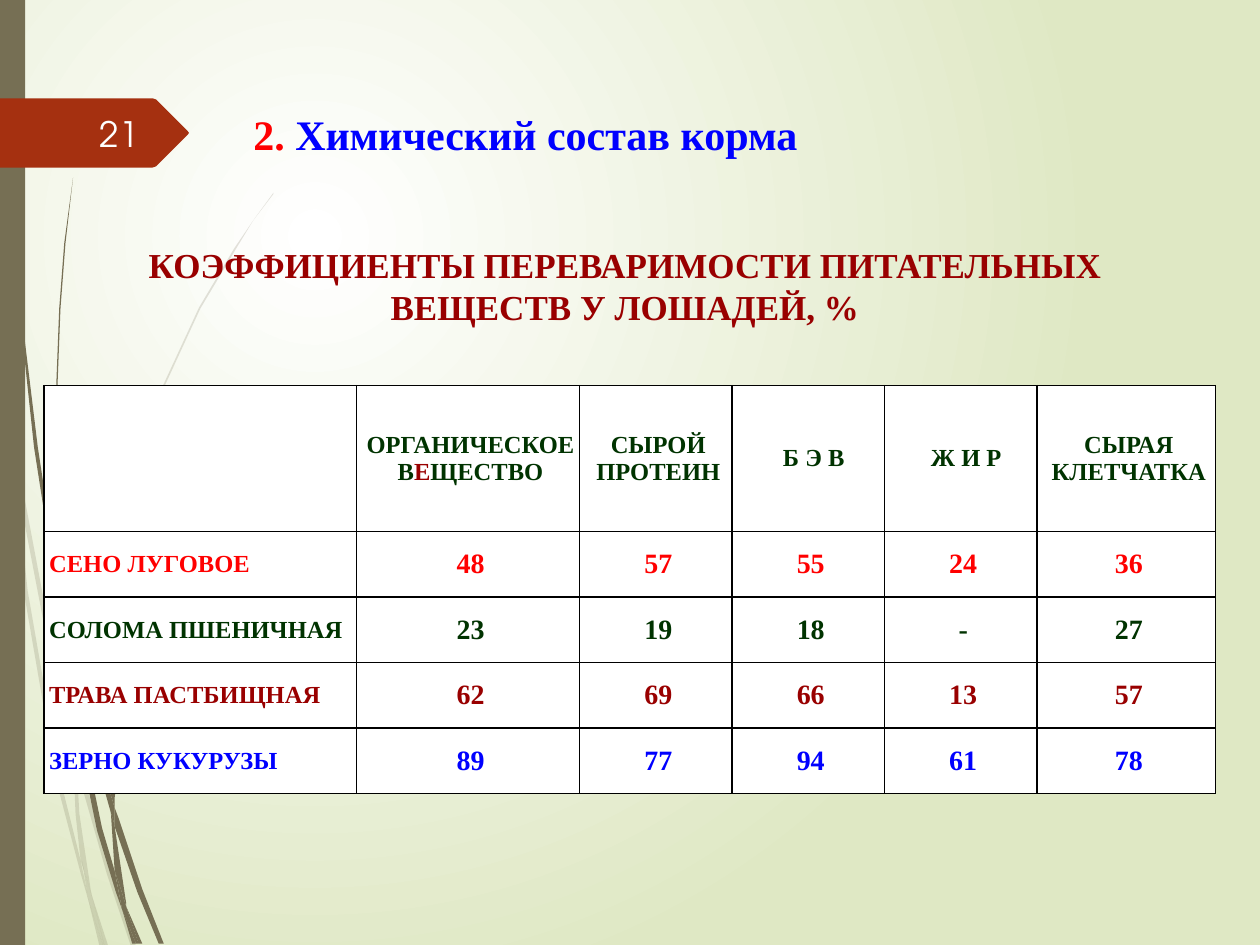
import pptx
import pptx.util
import pptx.dml.color
import pptx.enum.text
import pptx.oxml
import pptx.oxml.ns
from lxml import etree

Inches = pptx.util.Inches
ALIGN = pptx.enum.text.PP_ALIGN
MIDDLE = pptx.enum.text.MSO_ANCHOR.MIDDLE
qn = pptx.oxml.ns.qn


class Theme:
    serif, sans = "Times New Roman", "TeX Gyre Adventor"
    white, mist, olive, rust = "FFFFFF", "DFE8C4", "766F54", "A53010"
    red, blue, maroon, green = "FF0000", "0000FF", "990000", "003300"
    black, number = "000000", "FEFFFF"
    title, subtitle, label, value = 24, 20, 14, 16


# Grass outlines: x, y pairs in hundredths of an inch
PALE_GRASS = [
    [(8, 350), (6, 322), (0, 282), (0, 299), (7, 344)],
    [(40, 522), (59, 599), (59, 586), (43, 520), (10, 345), (12, 376)],
    [(64, 607), (61, 596), (61, 610), (85, 694), (104, 751), (108, 751), (88, 692)],
    [(83, 751), (86, 751), (73, 711)],
    [(64, 683), (48, 619), (22, 469), (12, 376), (8, 350), (19, 470), (45, 621),
     (64, 693), (70, 714), (69, 707)],
    [(58, 599), (60, 646), (64, 683), (67, 692), (73, 711), (72, 706), (63, 646),
     (61, 610), (61, 608)],
    [(61, 584), (76, 462), (111, 349), (159, 245), (187, 198), (201, 175), (217, 154),
     (217, 153), (201, 175), (186, 197), (158, 244), (110, 348), (75, 461), (59, 584),
     (59, 586), (61, 596)],
    [(70, 714), (79, 751), (82, 751)],
    [(61, 608), (61, 610), (61, 596), (59, 586), (58, 599)],
    [(67, 692), (65, 683), (69, 707), (70, 714), (82, 751), (83, 751), (73, 711)],
]
DARK_GRASS = [
    [(5, 110), (14, 233), (27, 355), (46, 477), (47, 481), (45, 457), (45, 453),
     (30, 355), (15, 232), (6, 109), (4, 48), (3, 0), (2, 0), (3, 48)],
    [(73, 592), (88, 645), (88, 633), (88, 631), (77, 590), (50, 472), (53, 505)],
    [(94, 649), (91, 641), (91, 656), (109, 708), (126, 749), (130, 749), (113, 706)],
    [(91, 691), (81, 657), (60, 556), (53, 505), (47, 477), (56, 557), (77, 659),
     (92, 708), (97, 722), (96, 717)],
    [(50, 472), (48, 453), (44, 349), (48, 245), (52, 193), (58, 141), (51, 193),
     (47, 245), (43, 349), (45, 449), (49, 472)],
    [(110, 749), (113, 749), (100, 719)],
    [(47, 477), (53, 505), (50, 472), (49, 472), (45, 449), (45, 453)],
    [(91, 633), (103, 552), (131, 476), (169, 406), (191, 374), (203, 359), (216, 344),
     (215, 344), (203, 358), (191, 373), (168, 405), (129, 474), (101, 551), (88, 631),
     (91, 641)],
    [(97, 722), (105, 749), (108, 749)],
    [(88, 645), (91, 691), (96, 706), (100, 719), (100, 716), (91, 656), (90, 651)],
    [(88, 645), (90, 651), (91, 656), (91, 641), (88, 631), (88, 633)],
    [(96, 706), (91, 691), (96, 717), (97, 722), (108, 749), (110, 749), (100, 719)],
]
BADGE = [(0, 78), (121, 78), (124, 79), (149, 104), (150, 105.5), (149, 107),
         (124, 132), (121, 133), (0, 133)]

# Table content: header paragraphs as (text, colour) runs, then feed rows
HEADERS = [
    [],
    [[("ОРГАНИЧЕСКОЕ", Theme.green)],
     [("В", Theme.green), ("Е", Theme.maroon), ("ЩЕСТВО", Theme.green)]],
    [[("СЫРОЙ", Theme.green)], [("ПРОТЕИН", Theme.green)]],
    [[(" Б Э В", Theme.green)]],
    [[(" Ж И Р", Theme.green)]],
    [[(" СЫРАЯ ", Theme.green)], [("КЛЕТЧАТКА", Theme.green)]],
]
FEEDS = [
    ("СЕНО ЛУГОВОЕ", Theme.red, "48 57 55 24 36"),
    ("СОЛОМА ПШЕНИЧНАЯ", Theme.green, "23 19 18 - 27"),
    ("ТРАВА ПАСТБИЩНАЯ", Theme.maroon, "62 69 66 13 57"),
    ("ЗЕРНО КУКУРУЗЫ", Theme.blue, "89 77 94 61 78"),
]
COLUMNS = [2.48, 1.77, 1.21, 1.21, 1.21, 1.42]
ROWS = [1.16] + [0.52] * len(FEEDS)


def rgb(color):
    return pptx.dml.color.RGBColor.from_string(color)


def apply(obj, values):
    for name, value in values.items():
        setattr(obj, name, value)


def fill_solid(fill, color):
    fill.solid()
    fill.fore_color.rgb = rgb(color)


def set_background(slide):
    fill = slide.background.fill
    fill.gradient()
    for stop, color in zip(fill.gradient_stops, (Theme.white, Theme.mist)):
        stop.color.rgb = rgb(color)
    grad = slide.element.find(".//" + qn("a:gradFill"))
    lin = grad.find(qn("a:lin"))
    circle = etree.Element(qn("a:path"), {"path": "circle"})
    etree.SubElement(circle, qn("a:fillToRect"),
                     dict(l="50000", t="50000", r="100000", b="100000"))
    grad.replace(lin, circle)


def style_shape(sp, color, opacity=100):
    fill_solid(sp.fill, color)
    sp.line.fill.background()
    sp.shadow.inherit = False
    if opacity < 100:
        clr = sp.fill._xPr.find(".//" + qn("a:srgbClr"))
        etree.SubElement(clr, qn("a:alpha"), {"val": str(opacity * 1000)})


def add_outline(shapes, points, color, opacity=100):
    pts = [(Inches(x / 100), Inches(y / 100)) for x, y in points]
    builder = shapes.build_freeform(*pts[0])
    builder.add_line_segments(pts[1:], close=True)
    style_shape(builder.convert_to_shape(), color, opacity)


def add_grass(slide, outlines, opacity):
    group = slide.shapes.add_group_shape()
    for points in outlines:
        add_outline(group.shapes, points, Theme.olive, opacity)


def write(tf, paragraphs, size, align, font=Theme.serif, bold=True):
    for i, runs in enumerate(paragraphs):
        p = tf.paragraphs[0] if i == 0 else tf.add_paragraph()
        p.alignment = align
        for text, color in runs:
            r = p.add_run()
            r.text = text
            apply(r.font, dict(name=font, size=pptx.util.Pt(size), bold=bold))
            r.font.color.rgb = rgb(color)


def add_text(slide, box, runs, size, align=ALIGN.CENTER, anchor=MIDDLE, **font):
    tf = slide.shapes.add_textbox(*map(Inches, box)).text_frame
    apply(tf, dict(word_wrap=True, vertical_anchor=anchor))
    write(tf, [runs], size, align, **font)


def format_cell(cell):
    apply(cell, dict(vertical_anchor=MIDDLE, margin_left=Inches(0.04), margin_right=0,
                     margin_top=Inches(0.05), margin_bottom=Inches(0.05)))
    tc_pr = cell._tc.get_or_add_tcPr()
    for side in ("lnL", "lnR", "lnT", "lnB"):
        ln = etree.SubElement(tc_pr, qn("a:" + side), {"w": str(pptx.util.Pt(1))})
        solid = etree.SubElement(ln, qn("a:solidFill"))
        etree.SubElement(solid, qn("a:srgbClr"), {"val": Theme.black})
    fill_solid(cell.fill, Theme.white)


def add_feed_table(slide):
    frame = slide.shapes.add_table(len(ROWS), len(COLUMNS), Inches(0.35), Inches(3.06),
                                   Inches(sum(COLUMNS)), Inches(sum(ROWS)))
    table = frame.table
    apply(table, dict(first_row=False, horz_banding=False))
    for column, width in zip(table.columns, COLUMNS):
        column.width = Inches(width)
    for row, height in zip(table.rows, ROWS):
        row.height = Inches(height)
    for cell in table.iter_cells():
        format_cell(cell)
    for col, paragraphs in enumerate(HEADERS):
        write(table.cell(0, col).text_frame, paragraphs, Theme.label, ALIGN.CENTER)
    for row, (feed, color, values) in enumerate(FEEDS, 1):
        write(table.cell(row, 0).text_frame, [[(feed, color)]], Theme.label, ALIGN.LEFT)
        for col, value in enumerate(values.split(), 1):
            write(table.cell(row, col).text_frame, [[(value, color)]],
                  Theme.value, ALIGN.CENTER)


def main():
    prs = pptx.Presentation()
    apply(prs, dict(slide_width=Inches(10), slide_height=Inches(7.5)))
    slide = prs.slides.add_slide(prs.slide_layouts[6])

    # Backdrop: gradient, grass, side bar and number badge
    set_background(slide)
    add_grass(slide, PALE_GRASS, 20)
    add_grass(slide, DARK_GRASS, 100)
    bar = slide.shapes.add_shape(1, 0, 0, Inches(0.2), Inches(7.5))
    style_shape(bar, Theme.olive)
    add_outline(slide.shapes, BADGE, Theme.rust)

    # Headings
    add_text(slide, (0.27, 0.81, 7.8, 0.5),
             [("2.", Theme.red), (" Химический состав корма", Theme.blue)],
             Theme.title, anchor=pptx.enum.text.MSO_ANCHOR.TOP)
    add_text(slide, (0.67, 1.88, 8.58, 0.77),
             [("КОЭФФИЦИЕНТЫ ПЕРЕВАРИМОСТИ ПИТАТЕЛЬНЫХ ВЕЩЕСТВ У ЛОШАДЕЙ, %",
               Theme.maroon)], Theme.subtitle)

    # Digestibility table and slide number
    add_feed_table(slide)
    add_text(slide, (0.56, 0.86, 0.64, 0.4), [("21", Theme.number)], Theme.subtitle,
             align=ALIGN.RIGHT, font=Theme.sans, bold=False)
    prs.save("out.pptx")


if __name__ == "__main__":
    main()
